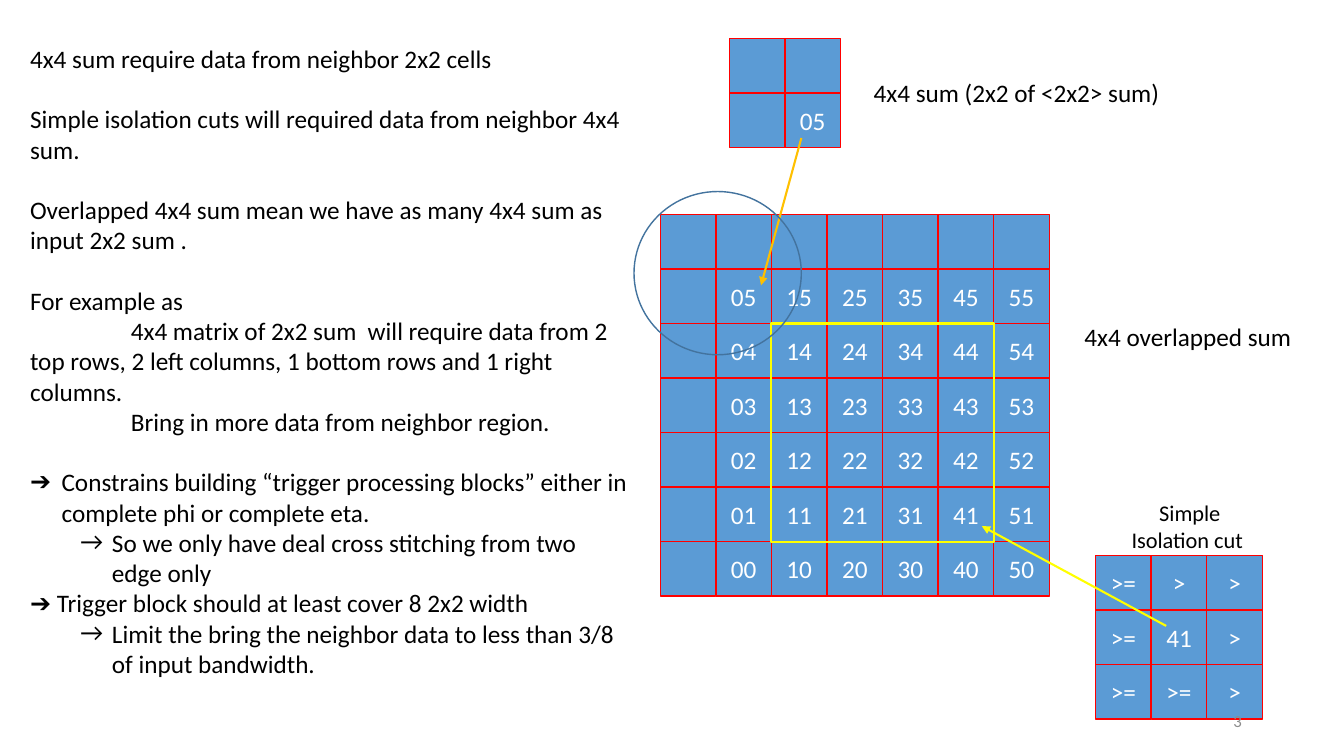
from dataclasses import dataclass

from lxml import etree
from pptx import Presentation
from pptx.dml.color import RGBColor
from pptx.enum.shapes import MSO_CONNECTOR, MSO_SHAPE
from pptx.enum.text import MSO_ANCHOR, MSO_AUTO_SIZE, PP_ALIGN
from pptx.oxml.ns import qn
from pptx.util import Pt

RECTANGLE, OVAL = MSO_SHAPE.RECTANGLE, MSO_SHAPE.OVAL
STRAIGHT = MSO_CONNECTOR.STRAIGHT
LEFT, CENTER, RIGHT = PP_ALIGN.LEFT, PP_ALIGN.CENTER, PP_ALIGN.RIGHT
TOP, MIDDLE = MSO_ANCHOR.TOP, MSO_ANCHOR.MIDDLE
FIT_SHAPE = MSO_AUTO_SIZE.SHAPE_TO_FIT_TEXT


@dataclass(frozen=True)
class Theme:
    font: str = "Calibri"
    body: float = 18
    caption: float = 16
    footer: float = 12
    text: str = "000000"
    cell_text: str = "FFFFFF"
    footer_text: str = "8C8C8C"
    cell_fill: str = "5B9BD5"
    cell_line: str = "FF0000"
    window: str = "FFFF00"
    sum_arrow: str = "FFC000"
    circle: str = "43739E"
    thin: float = 1
    thick: float = 1.5


THEME = Theme()

# Content: the first column and row of the overlapped grid are unlabelled
OVERLAP_ROWS = [[""] * 7] + [
    [""] + [f"{column}{row}" for column in range(6)] for row in range(5, -1, -1)
]
SUM_ROWS = [["", ""], ["", "05"]]
ISOLATION_ROWS = [[">=", ">", ">"], [">=", "41", ">"], [">=", ">=", ">"]]

# Paragraph styles: left margin, first-line indent, space before, bullet, level
STYLES = {
    "plain": (0, 0, 0, None, 0),
    "spaced": (0, 0, 21.6, None, 0),
    "indented": (0, 72, 0, None, 0),
    "point": (22.5, -22.5, 21.6, "➔", 0),
    "subpoint": (58.5, -22.5, 0, "→", 1),
}
NOTES = [
    ("plain", "4x4 sum require data from neighbor 2x2 cells"),
    ("spaced", "Simple isolation cuts will required data from neighbor 4x4 sum."),
    ("spaced", "Overlapped 4x4 sum mean we have as many 4x4 sum as input 2x2 sum ."),
    ("spaced", "For example as"),
    ("indented", "4x4 matrix of 2x2 sum  will require data from 2 top rows, "
                 "2 left columns, 1 bottom rows and 1 right columns."),
    ("indented", "Bring in more data from neighbor region."),
    ("point", "Constrains building “trigger processing blocks” either in "
              "complete phi or complete eta."),
    ("subpoint", "So we only have deal cross stitching from two edge only"),
    ("plain", "➔ Trigger block should at least cover 8 2x2 width"),
    ("subpoint", "Limit the bring the neighbor data to less than 3/8 of input bandwidth."),
]
SUM_LABEL = [("plain", "4x4 sum (2x2 of <2x2> sum)")]
OVERLAP_LABEL = [("plain", "4x4 overlapped sum")]
ISOLATION_LABEL = [("plain", "Simple"), ("plain", "Isolation cut ")]
PAGE_NUMBER = [("plain", "3")]

# Geometry in points
CELL_WIDTH, CELL_HEIGHT = 39.7, 38.95
OVERLAP_ORIGIN = (471.6, 153.2)
SUM_ORIGIN = (520.9, 27.4)
ISOLATION_ORIGIN = (782.6, 396.8)


def color(value):
    return RGBColor.from_string(value)


def box(left, top, width, height):
    return Pt(left), Pt(top), Pt(width), Pt(height)


def format_runs(paragraph, size, text_color):
    for run in paragraph.runs:
        run.font.name = THEME.font
        run.font.size = Pt(size)
        run.font.color.rgb = color(text_color)


def add_outline(slide, kind, bounds, line_color, line_width, fill=None):
    shape = slide.shapes.add_shape(kind, *box(*bounds))
    shape.shadow.inherit = False
    if fill:
        shape.fill.solid()
        shape.fill.fore_color.rgb = color(fill)
    else:
        shape.fill.background()
    shape.line.color.rgb = color(line_color)
    shape.line.width = Pt(line_width)
    return shape


def add_grid(slide, origin, rows):
    left, top = origin
    for row_index, row in enumerate(rows):
        for column_index, label in enumerate(row):
            bounds = (left + column_index * CELL_WIDTH, top + row_index * CELL_HEIGHT,
                      CELL_WIDTH, CELL_HEIGHT)
            cell = add_outline(slide, RECTANGLE, bounds, THEME.cell_line,
                               THEME.thin, THEME.cell_fill)
            if label:
                frame = cell.text_frame
                frame.text = label
                frame.margin_left = frame.margin_right = 0
                frame.vertical_anchor = MIDDLE
                frame.paragraphs[0].alignment = CENTER
                format_runs(frame.paragraphs[0], THEME.body, THEME.cell_text)


def add_arrow(slide, start, end, line_color):
    arrow = slide.shapes.add_connector(STRAIGHT, *box(*start, *end))
    arrow.line.color.rgb = color(line_color)
    arrow.line.width = Pt(THEME.thick)
    properties = arrow.line._get_or_add_ln()
    etree.SubElement(properties, qn("a:tailEnd"), type="triangle")
    etree.SubElement(arrow._element.spPr, qn("a:effectLst"))


def apply_style(paragraph, style):
    margin, indent, space, bullet, level = STYLES[style]
    paragraph.level = level
    paragraph.space_before = Pt(space)
    properties = paragraph._p.get_or_add_pPr()
    properties.set("marL", str(Pt(margin)))
    properties.set("indent", str(Pt(indent)))
    if bullet:
        etree.SubElement(properties, qn("a:buFont"), typeface=THEME.font)
        etree.SubElement(properties, qn("a:buChar"), char=bullet)


def add_text(slide, bounds, lines, size=THEME.body, text_color=THEME.text,
             alignment=LEFT, anchor=TOP, wrap=False):
    frame = slide.shapes.add_textbox(*box(*bounds)).text_frame
    frame.word_wrap = wrap
    frame.auto_size = FIT_SHAPE
    frame.vertical_anchor = anchor
    for index, (style, text) in enumerate(lines):
        paragraph = frame.add_paragraph() if index else frame.paragraphs[0]
        paragraph.text = text
        paragraph.alignment = alignment
        apply_style(paragraph, style)
        format_runs(paragraph, size, text_color)


def main():
    presentation = Presentation()
    presentation.slide_width, presentation.slide_height = Pt(960), Pt(540)
    slide = presentation.slides.add_slide(presentation.slide_layouts[6])

    # Grids, with the 4x4 window starting two cells into the overlapped grid
    add_grid(slide, OVERLAP_ORIGIN, OVERLAP_ROWS)
    window = (OVERLAP_ORIGIN[0] + 2 * CELL_WIDTH, OVERLAP_ORIGIN[1] + 2 * CELL_HEIGHT,
              4 * CELL_WIDTH, 4 * CELL_HEIGHT)
    add_outline(slide, RECTANGLE, window, THEME.window, THEME.thick)
    add_grid(slide, SUM_ORIGIN, SUM_ROWS)
    add_grid(slide, ISOLATION_ORIGIN, ISOLATION_ROWS)

    # Arrows and the circle around the summed corner
    add_arrow(slide, (572.4, 98.6), (543.6, 203.8), THEME.sum_arrow)
    add_arrow(slide, (833, 447.1), (701.3, 375.8), THEME.window)
    add_outline(slide, OVAL, (452.9, 136.8, 119.5, 116.6), THEME.circle, THEME.thin)

    # Labels, notes and page number
    add_text(slide, (617, 51.8, 221, 29), SUM_LABEL)
    add_text(slide, (767.5, 226.1, 164.2, 29), OVERLAP_LABEL)
    add_text(slide, (800.6, 352.8, 98.6, 46), ISOLATION_LABEL, THEME.caption,
             alignment=CENTER)
    add_text(slide, (14.4, 27.4, 442.8, 465), NOTES, wrap=True)
    add_text(slide, (678.2, 500.4, 216, 28.8), PAGE_NUMBER, THEME.footer,
             THEME.footer_text, RIGHT, MIDDLE, True)

    presentation.save("out.pptx")


if __name__ == "__main__":
    main()
